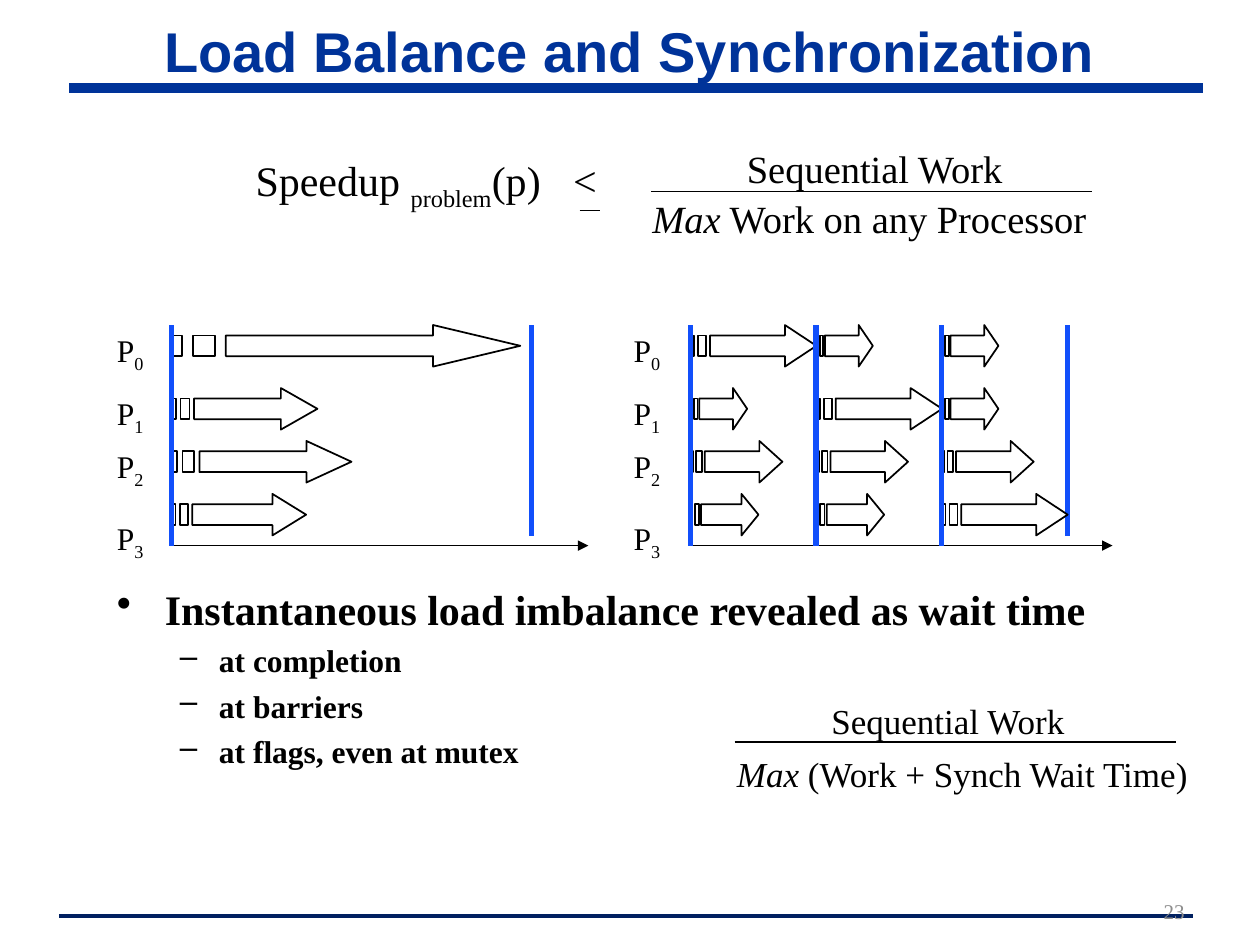
import dataclasses

import lxml.etree
import pptx
import pptx.dml.color
import pptx.enum.shapes
import pptx.enum.text
import pptx.oxml.ns
import pptx.util

Inches = pptx.util.Inches
Pt = pptx.util.Pt
qn = pptx.oxml.ns.qn
Align = pptx.enum.text.PP_ALIGN
Anchor = pptx.enum.text.MSO_ANCHOR


@dataclasses.dataclass(frozen=True)
class Theme:
    """Colours, fonts and type sizes of the slide."""
    ink: str = "000000"
    paper: str = "FFFFFF"
    title: str = "003399"
    footer: str = "002060"
    barrier: str = "114FFB"
    number: str = "8C8C8C"
    heading_font: str = "Arial"
    text_font: str = "Times New Roman"
    title_size: int = 32
    large: int = 24
    formula: int = 22
    small_formula: int = 20
    body: int = 18
    note: int = 12


THEME = Theme()
SUBSCRIPT = {"baseline": "-25000"}
LANE_TOPS = (0, 0.5, 0.92, 1.34)
LABEL_TOPS = (0, 0.5, 0.92, 1.49)
LANE_HEIGHT = 0.33


def rgb(value):
    """Turn a hex string into a colour."""
    return pptx.dml.color.RGBColor.from_string(value)


def apply(target, values):
    """Set every attribute named in a dict of format values."""
    for name, value in values.items():
        setattr(target, name, value)


def add_line(page, start, end, color, width, arrow=False):
    """Draw a straight line between two points given in inches."""
    points = [Inches(value) for value in (*start, *end)]
    line = page.shapes.add_connector(pptx.enum.shapes.MSO_CONNECTOR.STRAIGHT, *points)
    line.line.color.rgb = rgb(color)
    line.line.width = Pt(width)
    properties = line._element.spPr
    if arrow:
        lxml.etree.SubElement(properties.find(qn("a:ln")), qn("a:tailEnd"), type="triangle")
    lxml.etree.SubElement(properties, qn("a:effectLst"))


def add_spans(para, spans, size, color=THEME.ink, font=THEME.text_font, bold=False):
    """Add (text, format) spans that share a base format."""
    for text, extra in spans:
        span = para.add_run()
        span.text = text
        values = {"size": Pt(size), "name": font, "bold": bold, "italic": "italic" in extra}
        apply(span.font, values)
        span.font.color.rgb = rgb(color)
        if "baseline" in extra:
            span._r.get_or_add_rPr().set("baseline", extra["baseline"])


def add_box(page, place, wrap=True, anchor=Anchor.TOP):
    """Add an empty text box and return its text frame."""
    frame = page.shapes.add_textbox(*(Inches(value) for value in place)).text_frame
    apply(frame, {"word_wrap": wrap, "vertical_anchor": anchor})
    return frame


def add_text(page, place, spans, size, align=Align.LEFT, wrap=True, anchor=Anchor.TOP, **base):
    """Add a text box with one paragraph and return the paragraph."""
    para = add_box(page, place, wrap, anchor).paragraphs[0]
    para.alignment = align
    add_spans(para, spans, size, **base)
    return para


def add_frame(page):
    """Draw the title, both rules and the slide number."""
    add_line(page, (0.47, 7.27), (9.47, 7.27), THEME.footer, 2.25)
    add_line(page, (0.55, 0.7), (9.55, 0.7), THEME.title, 6)
    add_text(page, (7.17, 7.11, 2.33, 0.24), [("23", {})], THEME.note,
             Align.RIGHT, anchor=Anchor.MIDDLE, color=THEME.number)
    add_text(page, (0.5, 0.16, 9, 0.47), [("Load Balance and Synchronization", {})],
             THEME.title_size, Align.CENTER, anchor=Anchor.MIDDLE,
             color=THEME.title, font=THEME.heading_font, bold=True)


def add_striped_arrow(page, left, top, width):
    """Draw a right arrow whose tail breaks into two stripes."""
    def block(start, end):
        return [(start, 0.25), (end, 0.25), (end, 0.75), (start, 0.75)]

    head = [(0.75, 0), (0.75, 0.25), (5 / 32, 0.25), (5 / 32, 0.75),
            (0.75, 0.75), (0.75, 1), (1, 0.5)]
    contours = [[(Inches(left + x * width), Inches(top + y * LANE_HEIGHT)) for x, y in contour]
                for contour in (head, block(1 / 16, 1 / 8), block(0, 1 / 32))]
    builder = page.shapes.build_freeform(*contours[0][0])
    for index, contour in enumerate(contours):
        if index:
            builder.move_to(*contour[0])
        builder.add_line_segments(contour[1:], close=True)
    shape = builder.convert_to_shape()
    shape.shadow.inherit = False
    shape.fill.solid()
    shape.fill.fore_color.rgb = rgb(THEME.paper)
    shape.line.color.rgb = rgb(THEME.ink)
    shape.line.width = Pt(1)


def add_timeline(page, left, top, phase, phases, axis, label_gap):
    """Draw the work of four processors, split into phases by barriers."""
    bottom = top + 1.75
    end = left + phase * len(phases)
    add_line(page, (left, bottom), (left + axis, bottom), THEME.ink, 1, arrow=True)
    add_line(page, (end, top), (end, top + 1.67), THEME.barrier, 3)
    for index, widths in enumerate(phases):
        start = left + index * phase
        for lane, width in zip(LANE_TOPS, widths):
            add_striped_arrow(page, start, top + lane, width)
        add_line(page, (start, top), (start, bottom), THEME.barrier, 3)
    for number, offset in enumerate(LABEL_TOPS):
        add_text(page, (left - label_gap, top + offset, 0.44, LANE_HEIGHT),
                 [("P", {}), (str(number), SUBSCRIPT)], THEME.body)


def add_fraction(page, left, rule, upper, lower, denominator, size):
    """Draw a fraction around its rule; upper and lower are text boxes."""
    add_text(page, upper, [("Sequential Work", {})], size, wrap=False)
    add_line(page, (left, rule), (left + 3.5, rule), THEME.ink, 0.75)
    add_text(page, lower, [("Max", {"italic": True}), (denominator, {})], size, wrap=False)


def add_speedup(page, left, top):
    """Write the left side of the speedup bound."""
    spans = [("Speedup ", {}), ("problem", SUBSCRIPT), ("(p)\t<", {})]
    para = add_text(page, (left, top, 3, 0.5), [], THEME.large)
    stops = lxml.etree.SubElement(para._p.get_or_add_pPr(), qn("a:tabLst"))
    lxml.etree.SubElement(stops, qn("a:tab"), pos=str(Inches(2.52)), algn="l")
    add_spans(para, spans, THEME.large)
    add_line(page, (left + 2.67, top + 0.49), (left + 2.83, top + 0.49), THEME.ink, 0.75)


def add_bullets(page, place):
    """Write the finding and the places where waiting shows."""
    frame = add_box(page, place)
    items = [("Instantaneous load imbalance revealed as wait time", 0)]
    items += [(text, 1) for text in ("at completion", "at barriers", "at flags, even at mutex")]
    levels = [("•", 0.38, 0.38, THEME.large), ("–", 0.81, 0.31, THEME.body)]
    for index, (text, level) in enumerate(items):
        mark, margin, hanging, size = levels[level]
        para = frame.add_paragraph() if index else frame.paragraphs[0]
        apply(para, {"level": level, "space_before": Pt(4.3 if index else 0)})
        properties = para._p.get_or_add_pPr()
        properties.set("marL", str(Inches(margin)))
        properties.set("indent", str(-Inches(hanging)))
        lxml.etree.SubElement(properties, qn("a:buChar"), char=mark)
        add_spans(para, [(text, {})], size, bold=True)


def main():
    """Build the slide and save the deck."""
    deck = pptx.Presentation()
    apply(deck, {"slide_width": Inches(10), "slide_height": Inches(7.5)})
    page = deck.slides.add_slide(deck.slide_layouts[6])
    add_frame(page)
    add_timeline(page, 5.48, 2.58, 0.997,
                 [(1, 0.45, 0.73, 0.54), (0.45, 1, 0.73, 0.54), (0.45, 0.45, 0.73, 1)],
                 3.35, 0.55)
    add_timeline(page, 1.36, 2.58, 2.86, [(2.77, 1.16, 1.43, 1.07)], 3.31, 0.53)
    add_speedup(page, 1.93, 1.18)
    add_fraction(page, 5.17, 1.52, (5.83, 1.1, 2.26, 0.47), (5.08, 1.5, 3.68, 0.47),
                 " Work on any Processor", THEME.formula)
    add_bullets(page, (0.83, 4.58, 8.33, 1.5))
    add_fraction(page, 5.83, 5.89, (6.5, 5.5, 2.07, 0.43), (5.75, 5.92, 3.83, 0.43),
                 " (Work + Synch Wait Time)", THEME.small_formula)
    deck.save("out.pptx")


if __name__ == "__main__":
    main()
